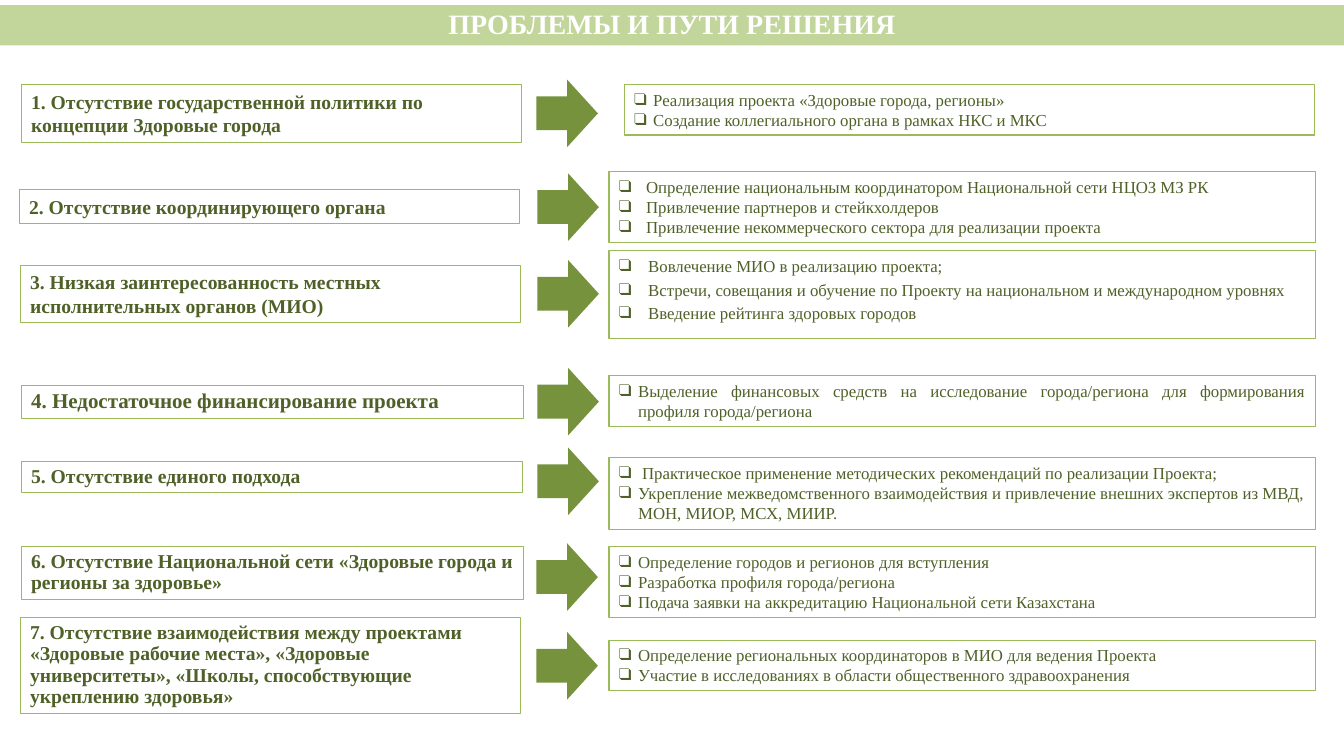
from dataclasses import dataclass

from lxml.etree import SubElement
from pptx import Presentation
from pptx.dml.color import RGBColor
from pptx.enum.shapes import MSO_SHAPE as Preset
from pptx.enum.text import MSO_ANCHOR as Anchor, MSO_AUTO_SIZE as AutoSize, PP_ALIGN as Align
from pptx.oxml.ns import qn
from pptx.util import Inches, Pt

COLORS = {"text": "4F6128", "border": "9BBB59", "arrow": "76923C", "banner": "C2D59B", "white": "FFFFFF"}
FONT = "Times New Roman"
BULLET = "❑"
ARROW_SIZE = (0.61, 0.67)


@dataclass
class Problem:
    box: tuple[float, float, float, float]
    text: str
    size: float = 14
    spacing: float = 1.0


@dataclass
class Solution:
    box: tuple[float, float, float, float]
    items: list[str]
    align: Align = Align.LEFT
    indent: float = 0.19
    first_indent: float = 0.0  # replaces the indent of the first item when set
    space_before: float = 0


@dataclass
class Row:
    problem: Problem
    arrow: tuple[float, float]
    solution: Solution


ROWS = [
    Row(Problem((0.21, 0.84, 4.96, 0.57),
                "1. Отсутствие государственной политики по концепции Здоровые города"),
        (5.32, 0.79),
        Solution((6.19, 0.84, 6.85, 0.5),
                 ["Реализация проекта «Здоровые города, регионы»",
                  "Создание коллегиального органа в рамках НКС и МКС"], Align.JUSTIFY)),
    Row(Problem((0.19, 1.88, 4.96, 0.34), "2. Отсутствие координирующего органа"),
        (5.33, 1.72),
        Solution((6.04, 1.7, 7.01, 0.71),
                 ["Определение национальным координатором Национальной сети НЦОЗ МЗ РК",
                  "Привлечение партнеров и стейкхолдеров",
                  "Привлечение некоммерческого сектора для реализации проекта"],
                 Align.JUSTIFY, indent=0.27)),
    Row(Problem((0.2, 2.63, 4.96, 0.57),
                "3. Низкая заинтересованность местных исполнительных органов (МИО)"),
        (5.33, 2.58),
        Solution((6.04, 2.49, 7.01, 0.87),
                 ["Вовлечение МИО в реализацию проекта;",
                  "Встречи, совещания и обучение по Проекту на национальном и международном уровнях",
                  "Введение рейтинга здоровых городов"],
                 Align.JUSTIFY, indent=0.29, space_before=2.4)),
    Row(Problem((0.21, 3.82, 4.98, 0.33), "4. Недостаточное финансирование проекта", 15, 0.9),
        (5.33, 3.65),
        Solution((6.04, 3.73, 7.01, 0.5),
                 ["Выделение финансовых средств на исследование города/региона "
                  "для формирования профиля города/региона"], Align.JUSTIFY)),
    Row(Problem((0.21, 4.58, 4.97, 0.31), "5. Отсутствие единого подхода", spacing=0.9),
        (5.33, 4.44),
        Solution((6.04, 4.54, 7.01, 0.71),
                 ["Практическое применение методических рекомендаций по реализации Проекта;",
                  "Укрепление межведомственного взаимодействия и привлечение внешних экспертов "
                  "из МВД, МОН, МИОР, МСХ, МИИР."], first_indent=0.23)),
    Row(Problem((0.21, 5.42, 4.98, 0.53),
                "6. Отсутствие Национальной сети «Здоровые города и регионы за здоровье»", spacing=0.9),
        (5.32, 5.39),
        Solution((6.04, 5.42, 7.01, 0.71),
                 ["Определение городов и регионов для вступления",
                  "Разработка профиля города/региона",
                  "Подача заявки на аккредитацию Национальной сети Казахстана"])),
    Row(Problem((0.2, 6.13, 4.96, 0.95),
                "7. Отсутствие взаимодействия между проектами «Здоровые рабочие места», "
                "«Здоровые университеты», «Школы, способствующие укреплению здоровья»", spacing=0.9),
        (5.32, 6.27),
        Solution((6.04, 6.35, 7.01, 0.5),
                 ["Определение региональных координаторов в МИО для ведения Проекта",
                  "Участие в исследованиях в области общественного здравоохранения"])),
]


def rgb(name: str) -> RGBColor:
    return RGBColor.from_string(COLORS[name])


def add_bullet(paragraph, indent: float) -> None:
    properties = paragraph._p.get_or_add_pPr()
    properties.set("marL", str(Inches(indent)))
    properties.set("indent", str(-Inches(indent)))
    color = SubElement(properties, qn("a:buClr"))
    SubElement(color, qn("a:srgbClr"), val=COLORS["text"])
    SubElement(properties, qn("a:buFont"), typeface=FONT)
    SubElement(properties, qn("a:buChar"), char=BULLET)


def write_text(paragraph, text: str, *, size: float, color: str = "text", bold: bool = False,
               align: Align = Align.LEFT, spacing: float = 1.0, space_before: float = 0,
               indent: float = 0) -> None:
    if indent:
        add_bullet(paragraph, indent)
    paragraph.alignment = align
    paragraph.line_spacing = spacing
    paragraph.space_before = Pt(space_before)
    run = paragraph.add_run()
    run.text = text
    run.font.name = FONT
    run.font.size = Pt(size)
    run.font.bold = bold
    run.font.color.rgb = rgb(color)


def add_box(slide, box: tuple[float, float, float, float]):
    shape = slide.shapes.add_shape(Preset.RECTANGLE, *map(Inches, box))
    shape.shadow.inherit = False
    shape.fill.background()
    shape.line.color.rgb = rgb("border")
    shape.line.width = Pt(0.75)
    shape.text_frame.word_wrap = True
    shape.text_frame.vertical_anchor = Anchor.TOP
    return shape.text_frame


def add_problem(slide, problem: Problem) -> None:
    frame = add_box(slide, problem.box)
    write_text(frame.paragraphs[0], problem.text, size=problem.size, bold=True, spacing=problem.spacing)


def add_arrow(slide, position: tuple[float, float]) -> None:
    arrow = slide.shapes.add_shape(Preset.RIGHT_ARROW, *map(Inches, position + ARROW_SIZE))
    arrow.shadow.inherit = False
    arrow.fill.solid()
    arrow.fill.fore_color.rgb = rgb("arrow")
    arrow.line.fill.background()


def add_solution(slide, solution: Solution) -> None:
    frame = add_box(slide, solution.box)
    for index, item in enumerate(solution.items):
        first = index == 0
        paragraph = frame.paragraphs[0] if first else frame.add_paragraph()
        write_text(paragraph, item, size=12, align=solution.align,
                   space_before=0 if first else solution.space_before,
                   indent=first and solution.first_indent or solution.indent)


def format_title(slide, text: str) -> None:
    title = slide.shapes.title
    title.left, title.top, title.width, title.height = map(Inches, (0, 0.05, 13.33, 0.4))
    title.fill.solid()
    title.fill.fore_color.rgb = rgb("banner")
    frame = title.text_frame
    frame.auto_size = AutoSize.NONE
    frame.vertical_anchor = Anchor.MIDDLE
    write_text(frame.paragraphs[0], text, size=20, color="white", bold=True,
               align=Align.CENTER, spacing=0.9)


def main() -> None:
    presentation = Presentation()
    presentation.slide_width, presentation.slide_height = Inches(13.33), Inches(7.5)
    slide = presentation.slides.add_slide(presentation.slide_layouts[5])

    # Banner
    format_title(slide, "ПРОБЛЕМЫ И ПУТИ РЕШЕНИЯ")

    # Problem, arrow and solution in each row
    for row in ROWS:
        add_problem(slide, row.problem)
        add_arrow(slide, row.arrow)
        add_solution(slide, row.solution)

    presentation.save("out.pptx")


if __name__ == "__main__":
    main()
